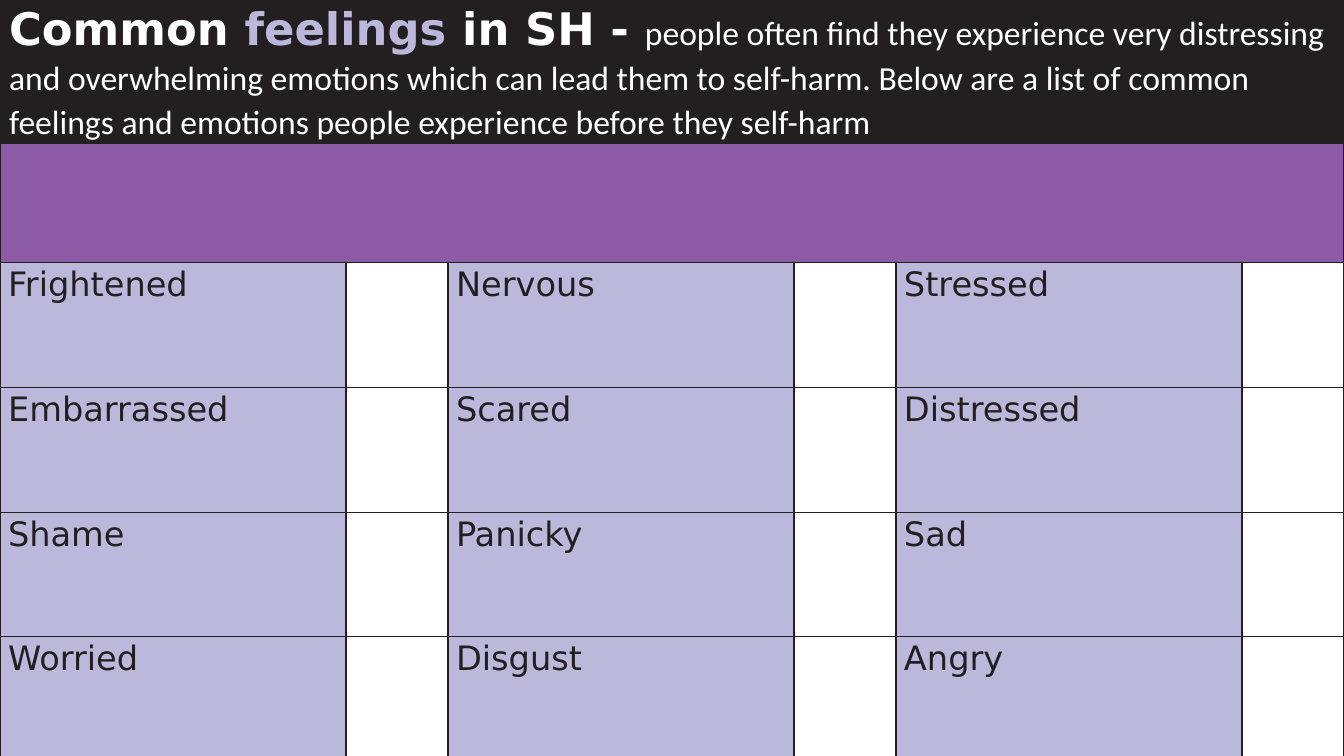
from lxml import etree
from pptx import Presentation
from pptx import util as u
from pptx.dml.color import RGBColor
from pptx.oxml import ns

COLOURS = {"ink": "231F20", "lilac": "BBB8DC", "purple": "8D5BA5", "white": "FFFFFF"}
COLUMN_SHARES = (3.43 / 13.32, 1.01 / 13.32) * 3
ROW_HEIGHTS = (1.42, 1.18, 1.24, 1.24, 1.23, 1.24)
FEELINGS = (
    ("Frightened", "Nervous", "Stressed"),
    ("Embarrassed", "Scared", "Distressed"),
    ("Shame", "Panicky", "Sad"),
    ("Worried", "Disgust", "Angry"),
)
INTRODUCTION = (
    "people often find they experience very distressing and overwhelming emotions "
    "which can lead them to self-harm. Below are a list of common feelings and "
    "emotions people experience before they self-harm"
)


def add_text(paragraph, content, font="DejaVu Sans", size=24, colour="ink", bold=False):
    """Append a formatted run to a paragraph."""
    run = paragraph.add_run()
    run.text = content
    run.font.name = font
    run.font.size = u.Pt(size)
    run.font.bold = bold
    run.font.color.rgb = RGBColor.from_string(COLOURS[colour])


class FeelingsSlide:
    """Hold the slide and the style of its feelings table."""

    def __init__(self, presentation):
        """Add a blank slide to the presentation."""
        self.width = presentation.slide_width
        self.slide = presentation.slides.add_slide(presentation.slide_layouts[6])

    def add_grid(self, column_shares, row_heights):
        """Add a plain table across the full slide width."""
        frame = self.slide.shapes.add_table(
            len(row_heights), len(column_shares), 0, 0, self.width, u.Inches(sum(row_heights))
        )
        self.table = frame.table
        self.table.first_row = False
        self.table.horz_banding = False
        for column, share in zip(self.table.columns, column_shares):
            column.width = int(self.width * share)
        for row, height in zip(self.table.rows, row_heights):
            row.height = u.Inches(height)

    def style_cell(self, cell, fill=None, borders="LRTB"):
        """Set the fill and the visible borders of a cell."""
        if fill:
            cell.fill.solid()
            cell.fill.fore_color.rgb = RGBColor.from_string(COLOURS[fill])
        else:
            cell.fill.background()
        properties = cell._tc.get_or_add_tcPr()
        for position, side in enumerate("LRTB"):
            line = etree.Element(ns.qn(f"a:ln{side}"), w=str(u.Pt(1)))
            if side in borders:
                solid = etree.SubElement(line, ns.qn("a:solidFill"))
                etree.SubElement(solid, ns.qn("a:srgbClr"), val=COLOURS["ink"])
            else:
                etree.SubElement(line, ns.qn("a:noFill"))
            properties.insert(position, line)

    def add_band(self, row, fill, borders):
        """Merge a whole row into one filled band."""
        cells = list(self.table.rows[row].cells)
        for cell in cells:
            self.style_cell(cell, fill, borders)
        cells[0].merge(cells[-1])
        return cells[0]

    def start_paragraph(self, cell, indent, space_before):
        """Return the first paragraph of a cell without insets."""
        cell.margin_left = cell.margin_right = cell.margin_top = cell.margin_bottom = 0
        paragraph = cell.text_frame.paragraphs[0]
        paragraph.line_spacing = 1.07
        paragraph.space_before = u.Pt(space_before)
        paragraph._p.get_or_add_pPr().set("marL", str(u.Inches(indent)))
        return paragraph

    def add_feelings(self, row, names):
        """Fill a row with feelings, each followed by an open tick cell."""
        for index, name in enumerate(names):
            name_cell = self.table.cell(row, 2 * index)
            self.style_cell(name_cell, "lilac")
            self.style_cell(self.table.cell(row, 2 * index + 1))
            add_text(self.start_paragraph(name_cell, 0.08, 4), name)


def main():
    """Build and save the slide."""
    presentation = Presentation()
    presentation.slide_width = u.Inches(13.33)
    presentation.slide_height = u.Inches(7.5)
    page = FeelingsSlide(presentation)
    page.add_grid(COLUMN_SHARES, ROW_HEIGHTS)

    heading = page.start_paragraph(page.add_band(0, "ink", ""), 0.09, 5)
    for words, colour in (("Common ", "white"), ("feelings ", "lilac"), ("in SH - ", "white")):
        add_text(heading, words, size=32, colour=colour, bold=True)
    add_text(heading, INTRODUCTION, font="Calibri", colour="white")

    page.add_band(1, "purple", "LRB")
    for row, names in enumerate(FEELINGS, start=2):
        page.add_feelings(row, names)
    presentation.save("out.pptx")


if __name__ == "__main__":
    main()
